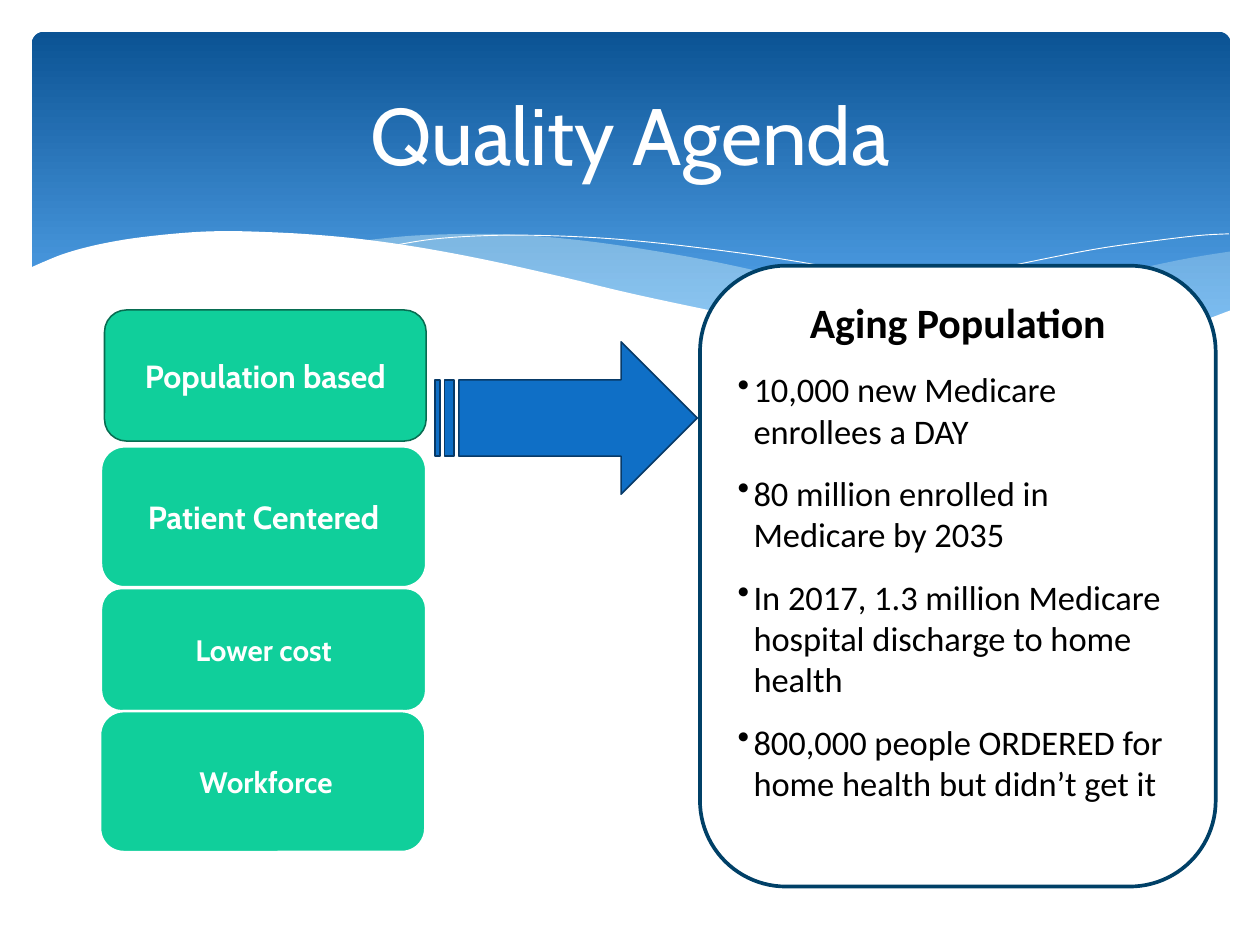
"""Build the Quality Agenda slide."""
from lxml import etree
from pptx import Presentation
from pptx.dml.color import RGBColor
from pptx.enum.shapes import MSO_SHAPE as Kind
from pptx.enum.text import MSO_ANCHOR as Anchor, PP_ALIGN as Align
from pptx.oxml.ns import qn
from pptx.util import Inches, Pt

TITLE = "Quality Agenda"
HEAD = "Aging Population"
FACTS = [
    "10,000 new Medicare enrollees a DAY",
    "80 million enrolled in Medicare by 2035",
    "In 2017, 1.3 million Medicare hospital discharge to home health",
    "800,000 people ORDERED for home health but didn’t get it",
]
GOALS = [
    ("Population based", 26, (1.18, 3.5, 3.63, 1.48), "086C51", 1.25),
    ("Patient Centered", 26, (1.14, 5.04, 3.67, 1.59), "FFFFFF", 2),
    ("Lower cost", 24, (1.14, 6.64, 3.67, 1.39), "FFFFFF", 2),
    (" Workforce", 24, (1.13, 8.03, 3.67, 1.59), "FFFFFF", 2),
]
CREST = [
    [(13.88, 2.84), (13.29, 2.94), (12.24, 3.17), (11.08, 3.45), (10.04, 3.66), (9.41, 3.77)],
    [(9.41, 3.77), (10.22, 3.88), (10.94, 3.93), (11.58, 3.95), (12.27, 3.91),
     (12.88, 3.82), (13.4, 3.69), (13.88, 3.51)],
]
SWELL = [
    [(12.7, 3.88), (11.91, 3.77), (11.02, 3.62), (10.04, 3.41), (8.94, 3.15), (8.09, 2.96),
     (7.31, 2.82), (6.61, 2.72), (5.97, 2.66), (5.4, 2.64), (4.67, 2.66), (4.07, 2.72)],
    [(4.07, 2.72), (4.87, 2.83), (5.75, 3), (6.39, 3.15), (7.53, 3.42), (8.55, 3.63),
     (9.46, 3.79), (10.27, 3.89), (10.99, 3.95), (11.63, 3.96), (12.2, 3.94), (12.7, 3.88)],
]
LONG = [[(4.4, 2.78), (4.89, 2.7), (5.51, 2.66), (6.15, 2.66), (6.95, 2.7), (7.91, 2.8),
         (9.04, 2.96), (10.34, 3.21), (11.82, 3.56), (12.9, 3.86)]]
SHORT = [[(8.72, 3.65), (9.56, 3.43), (10.63, 3.17), (11.46, 2.99), (12.32, 2.82),
          (12.94, 2.73), (13.52, 2.66), (13.87, 2.64)]]
BASE = [
    [(13.9, 3.5), (13.37, 3.69), (12.78, 3.83), (12.09, 3.91), (11.5, 3.93), (10.83, 3.91),
     (10.07, 3.84), (9.21, 3.73), (8.24, 3.55), (7.15, 3.32), (6.36, 3.13), (5.56, 2.95),
     (4.83, 2.81), (4.16, 2.71), (3.55, 2.65), (3, 2.62), (2.51, 2.61), (2.07, 2.63),
     (1.51, 2.69), (1.07, 2.77), (0.74, 2.86), (0.51, 2.95), (0.33, 3.03)],
    [(0.33, 4.68), (13.9, 4.68)],
]


def tint(code):
    return RGBColor.from_string(code)


def paint(shape, fill=None, line=None, width=1, alpha=None):
    shape.shadow.inherit = False
    if fill:
        shape.fill.solid()
        shape.fill.fore_color.rgb = tint(fill)
        if alpha:
            node = next(shape.element.spPr.iter(qn("a:srgbClr")))
            etree.SubElement(node, qn("a:alpha"), val=str(alpha * 1000))
    else:
        shape.fill.background()
    if line:
        shape.line.color.rgb = tint(line)
        shape.line.width = Pt(width)
    else:
        shape.line.fill.background()


def place(shapes, kind, box, **look):
    shape = shapes.add_shape(kind, *map(Inches, box))
    paint(shape, **look)
    return shape


def smooth(knots, steps=5):
    ends = [knots[0], *knots, knots[-1]]
    points = []
    for a, b, c, d in zip(ends, ends[1:], ends[2:], ends[3:]):
        for t in (n / steps for n in range(steps)):
            points.append(tuple(
                (2 * q + (r - p) * t + (2 * p - 5 * q + 4 * r - s) * t ** 2
                 + (3 * q - p - 3 * r + s) * t ** 3) / 2
                for p, q, r, s in zip(a, b, c, d)))
    return points + [knots[-1]]


def wave(shapes, edges, **look):
    points = [(Inches(x), Inches(y)) for edge in edges for x, y in smooth(edge)]
    pen = shapes.build_freeform(*points[0])
    pen.add_line_segments(points[1:], close="fill" in look)
    paint(pen.convert_to_shape(), **look)


def write(para, text, size=28, font="Calibri", color="000000", bold=False,
          align=Align.CENTER, after=0, bullet=False):
    para.alignment = align
    para.space_after = Pt(after)
    run = para.add_run()
    run.text = text
    run.font.size, run.font.name, run.font.bold = Pt(size), font, bold
    run.font.color.rgb = tint(color)
    if bullet:
        props = para._p.get_or_add_pPr()
        props.set("marL", str(Inches(0.18)))
        props.set("indent", str(Inches(-0.18)))
        etree.SubElement(props, qn("a:buChar"), char="•")


def frame(shape, anchor=Anchor.MIDDLE):
    body = shape.text_frame
    body.word_wrap = True
    body.vertical_anchor = anchor
    body.margin_left = body.margin_right = Inches(0.14)
    body.margin_top = body.margin_bottom = Inches(0.07)
    return body


def main():
    deck = Presentation()
    deck.slide_width, deck.slide_height = Inches(14.22), Inches(10.67)
    shapes = deck.slides.add_slide(deck.slide_layouts[5]).shapes

    banner = place(shapes, Kind.ROUNDED_RECTANGLE, (0.36, 0.36, 13.53, 3.84))
    banner.adjustments[0] = 0.034
    banner.fill.gradient()
    banner.fill.gradient_angle = 270
    for stop, spot, code in zip(banner.fill.gradient_stops, (0, 0.9), ("0B5394", "59AAF2")):
        stop.position = spot
        stop.color.rgb = tint(code)

    wave(shapes, CREST, fill="DBF5F9", alpha=29)
    wave(shapes, SWELL, fill="DBF5F9", alpha=40)
    for edges in (LONG, SHORT):
        wave(shapes, edges, line="FFFFFF", width=0)
    wave(shapes, BASE, fill="FFFFFF")

    title = shapes.title
    title.left, title.top, title.width, title.height = map(Inches, (0.71, 0.53, 12.8, 1.95))
    write(frame(title).paragraphs[0], TITLE, size=65, font="Cabin", color="FFFFFF")
    title.element.getparent().append(title.element)

    panel = place(shapes, Kind.ROUNDED_RECTANGLE, (7.9, 3, 5.82, 7.01),
                  fill="FFFFFF", line="004067", width=3)
    body = frame(panel, Anchor.TOP)
    write(body.paragraphs[0], HEAD, size=34, bold=True, after=17.1)
    for fact in FACTS:
        write(body.add_paragraph(), fact, align=Align.LEFT, after=17.1, bullet=True)

    for text, size, box, line, width in GOALS:
        goal = place(shapes, Kind.ROUNDED_RECTANGLE, box, fill="10CF9B", line=line, width=width)
        write(frame(goal).paragraphs[0], text, size=size, font="Cabin", color="FFFFFF", bold=True)
    place(shapes, Kind.STRIPED_RIGHT_ARROW, (4.91, 3.86, 2.96, 1.72),
          fill="0F6FC6", line="083A67", width=1.25)

    deck.save("out.pptx")


if __name__ == "__main__":
    main()
